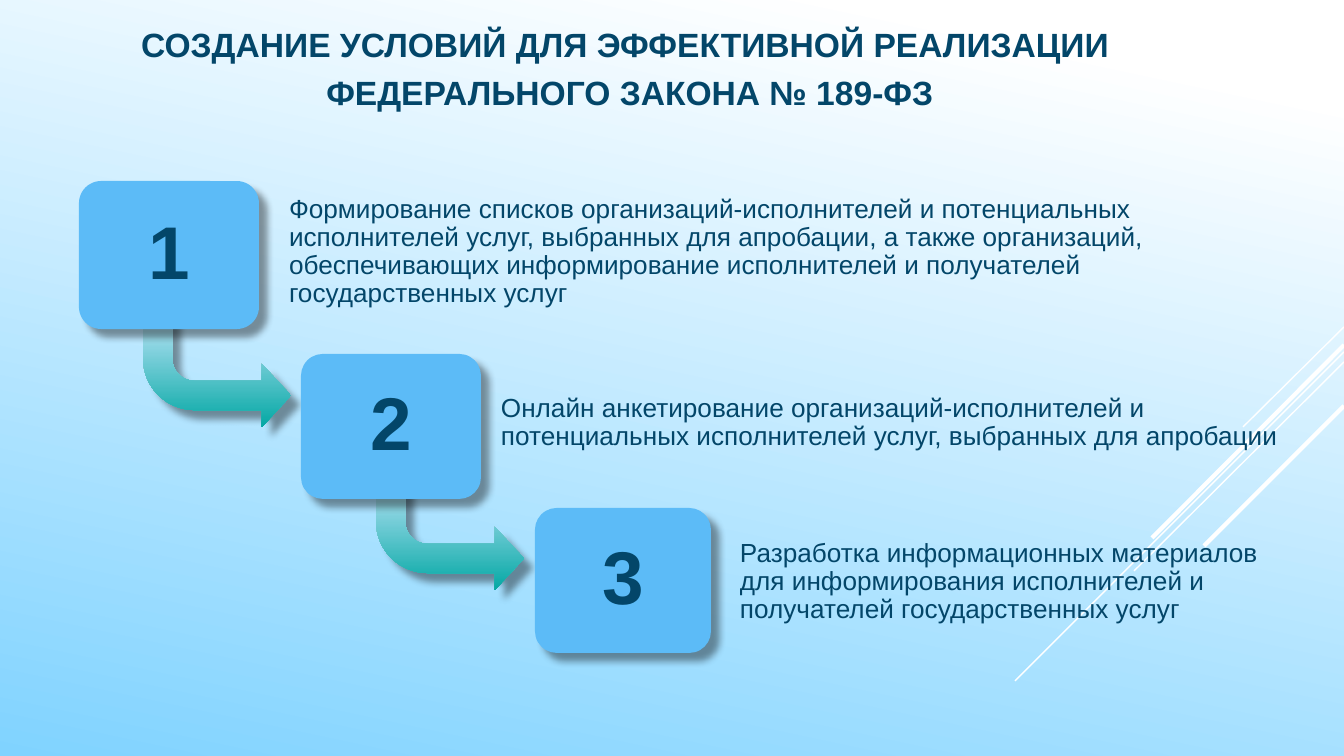
from dataclasses import dataclass

from lxml import etree
from pptx import Presentation
from pptx.dml.color import RGBColor
from pptx.enum.shapes import MSO_CONNECTOR, MSO_SHAPE
from pptx.enum.text import MSO_ANCHOR, PP_ALIGN
from pptx.oxml.ns import qn
from pptx.util import Emu, Pt

EMU_PER_PX = 914400 / 134.4
LEFT, CENTER = PP_ALIGN.LEFT, PP_ALIGN.CENTER
TOP, MIDDLE = MSO_ANCHOR.TOP, MSO_ANCHOR.MIDDLE
ROUNDED, BENT_ARROW = MSO_SHAPE.ROUNDED_RECTANGLE, MSO_SHAPE.BENT_ARROW
STRAIGHT = MSO_CONNECTOR.STRAIGHT
FONT = "Arial"
COLORS = {
    "text": "034669",
    "card": "5CBBF7",
    "white": "FFFFFF",
    "sky": "80D3FF",
    "arrow_start": "C6E7FC",
    "arrow_end": "04A8A4",
    "shadow": "000000",
}


@dataclass(frozen=True)
class Box:
    left: int
    top: int
    width: int
    height: int

    def emu(self) -> tuple[Emu, ...]:
        return tuple(px(n) for n in (self.left, self.top, self.width, self.height))


@dataclass(frozen=True)
class Step:
    number: str
    card: Box
    description: str
    description_box: Box
    inset: int


@dataclass(frozen=True)
class Ray:
    start_y: int
    end_x: int
    end_y: int
    weight: float


SLIDE = Box(0, 0, 1344, 756)
TITLE_BOX = Box(16, 9, 1228, 106)
TITLE = ["СОЗДАНИЕ УСЛОВИЙ ДЛЯ ЭФФЕКТИВНОЙ РЕАЛИЗАЦИИ ", "ФЕДЕРАЛЬНОГО ЗАКОНА № 189-ФЗ"]
RAYS = [
    Ray(327, 1243, 427, 0.75),
    Ray(352, 1015, 681, 0.75),
    Ray(362, 1134, 571, 0.75),
    Ray(345, 1152, 538, 2.25),
    Ray(406, 1204, 546, 2.25),
]
ARROWS = [Box(376, 473, 148, 117), Box(143, 310, 148, 117)]
STEPS = [
    Step("1", Box(79, 181, 180, 148),
         "Формирование списков организаций-исполнителей и потенциальных "
         "исполнителей услуг, выбранных для апробации, а также организаций, "
         "обеспечивающих информирование исполнителей и получателей "
         "государственных услуг",
         Box(280, 181, 996, 142), 9),
    Step("2", Box(301, 354, 180, 145),
         "Онлайн анкетирование организаций-исполнителей и "
         "потенциальных исполнителей услуг, выбранных для апробации",
         Box(492, 352, 805, 142), 9),
    Step("3", Box(535, 508, 176, 145),
         "Разработка информационных материалов "
         "для информирования исполнителей и "
         "получателей государственных услуг",
         Box(735, 511, 578, 142), 5),
]


def px(length: int) -> Emu:
    return Emu(round(length * EMU_PER_PX))


def color(name: str) -> RGBColor:
    return RGBColor.from_string(COLORS[name])


def set_gradient(fill, stops: list[tuple[float, str]], angle: int) -> None:
    fill.gradient()
    fill.gradient_angle = angle
    for stop, (position, name) in zip(fill.gradient_stops, stops):
        stop.position = position
        stop.color.rgb = color(name)


def add_shadow(shape, distance: float) -> None:
    shape.shadow.inherit = False
    effects = shape._element.spPr.find(qn("a:effectLst"))
    shadow = etree.SubElement(effects, qn("a:outerShdw"), blurRad=str(Pt(4)),
                              dist=str(Pt(distance)), dir="2700000",
                              algn="tl", rotWithShape="0")
    shade = etree.SubElement(shadow, qn("a:srgbClr"), val=COLORS["shadow"])
    etree.SubElement(shade, qn("a:alpha"), val="40000")


def write_text(shape, lines: list[str], *, size: int, bold: bool = False,
               align=LEFT, anchor=MIDDLE, spacing: float = 0.9,
               inset_x: int = 13, inset_y: int = 7) -> None:
    frame = shape.text_frame
    frame.word_wrap = True
    frame.vertical_anchor = anchor
    frame.margin_left = frame.margin_right = px(inset_x)
    frame.margin_top = frame.margin_bottom = px(inset_y)
    for index, line in enumerate(lines):
        paragraph = frame.add_paragraph() if index else frame.paragraphs[0]
        paragraph.alignment = align
        paragraph.line_spacing = spacing
        run = paragraph.add_run()
        run.text = line
        run.font.name = FONT
        run.font.size = Pt(size)
        run.font.bold = bold
        run.font.color.rgb = color("text")


def add_ray(slide, ray: Ray) -> None:
    line = slide.shapes.add_connector(STRAIGHT, px(SLIDE.width), px(ray.start_y),
                                      px(ray.end_x), px(ray.end_y))
    line.line.color.rgb = color("white")
    line.line.width = Pt(ray.weight)
    etree.SubElement(line._element.spPr, qn("a:effectLst"))


def add_arrow(slide, box: Box) -> None:
    arrow = slide.shapes.add_shape(BENT_ARROW, *box.emu())
    for index, value in enumerate((0.25, 0.27, 0.25, 0.44)):
        arrow.adjustments[index] = value
    # Half a turn plus a mirror makes the arrow run down, then right
    arrow.rotation = 180
    arrow._element.spPr.find(qn("a:xfrm")).set("flipH", "1")
    set_gradient(arrow.fill, [(0, "arrow_start"), (1, "arrow_end")], 90)
    arrow.line.fill.background()
    add_shadow(arrow, 7)


def add_step(slide, step: Step) -> None:
    card = slide.shapes.add_shape(ROUNDED, *step.card.emu())
    card.adjustments[0] = 0.15
    card.fill.solid()
    card.fill.fore_color.rgb = color("card")
    card.line.fill.background()
    add_shadow(card, 6)
    write_text(card, [step.number], size=40, bold=True, align=CENTER,
               inset_x=36, inset_y=36)
    description = slide.shapes.add_textbox(*step.description_box.emu())
    write_text(description, [step.description], size=14,
               inset_x=step.inset, inset_y=step.inset)


def main() -> None:
    presentation = Presentation()
    presentation.slide_width = px(SLIDE.width)
    presentation.slide_height = px(SLIDE.height)
    slide = presentation.slides.add_slide(presentation.slide_layouts[6])

    # Background with diagonal rays
    set_gradient(slide.background.fill, [(0.1, "white"), (1, "sky")], 258)
    for ray in RAYS:
        add_ray(slide, ray)

    # Title
    title = slide.shapes.add_textbox(*TITLE_BOX.emu())
    write_text(title, TITLE, size=18, bold=True, align=CENTER, anchor=TOP, spacing=1.2)

    # Staircase of steps, arrows behind the cards
    for box in ARROWS:
        add_arrow(slide, box)
    for step in STEPS:
        add_step(slide, step)

    presentation.save("out.pptx")


if __name__ == "__main__":
    main()
